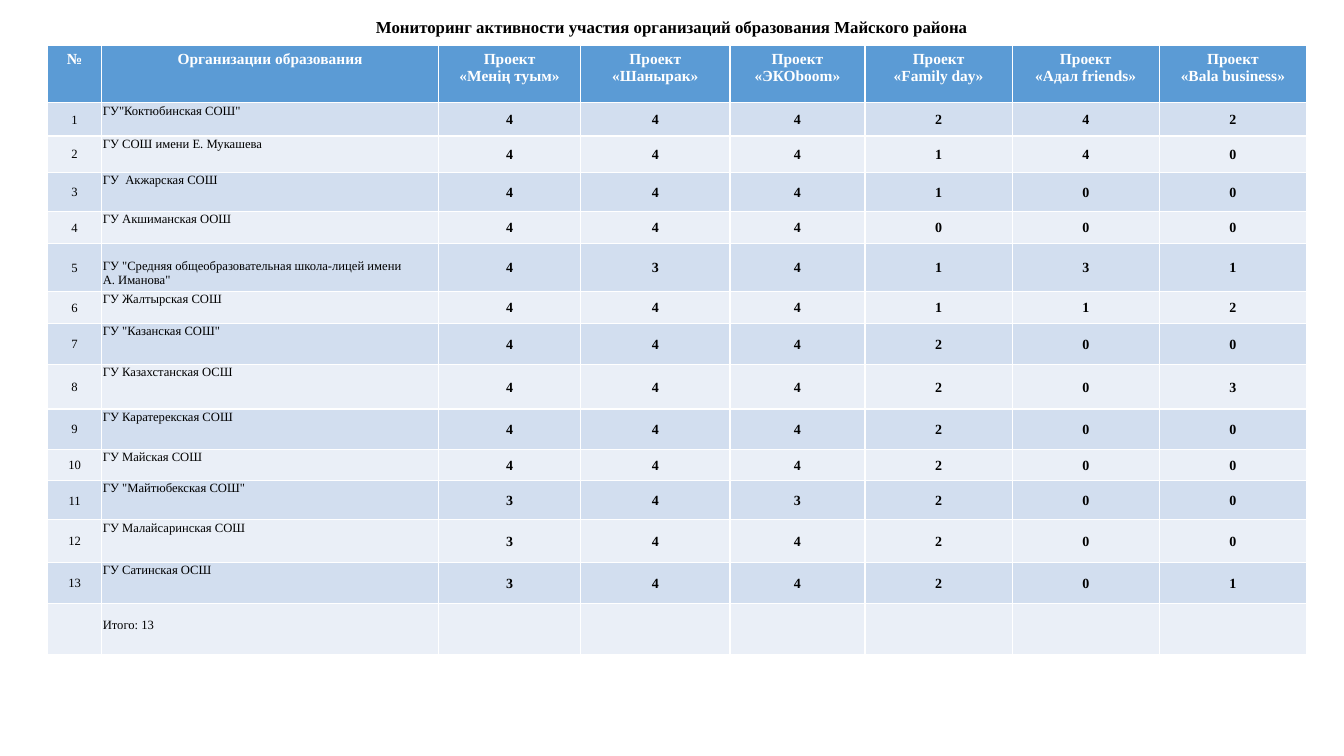
from pptx import Presentation
from pptx.dml.color import RGBColor
from pptx.enum.text import MSO_ANCHOR, PP_ALIGN
from pptx.util import Inches, Pt

HEADERS = ["№", "Организации образования", "Проект\n«Менің туым»", "Проект «Шанырак»",
           "Проект «ЭКОboom»", "Проект\n«Family day»", "Проект\n«Адал friends»",
           "Проект\n«Bala business»"]
SCHOOLS = [
    ('ГУ"Коктюбинская СОШ"', 4, 4, 4, 2, 4, 2),
    ("ГУ СОШ имени Е. Мукашева", 4, 4, 4, 1, 4, 0),
    ("ГУ  Акжарская СОШ", 4, 4, 4, 1, 0, 0),
    ("ГУ Акшиманская ООШ", 4, 4, 4, 0, 0, 0),
    ('ГУ "Средняя общеобразовательная школа-лицей имени\nА. Иманова"', 4, 3, 4, 1, 3, 1),
    ("ГУ Жалтырская СОШ", 4, 4, 4, 1, 1, 2),
    ('ГУ "Казанская СОШ"', 4, 4, 4, 2, 0, 0),
    ("ГУ Казахстанская ОСШ", 4, 4, 4, 2, 0, 3),
    ("ГУ Каратерекская СОШ", 4, 4, 4, 2, 0, 0),
    ("ГУ Майская СОШ", 4, 4, 4, 2, 0, 0),
    ('ГУ "Майтюбекская СОШ"', 3, 4, 3, 2, 0, 0),
    ("ГУ Малайсаринская СОШ", 3, 4, 4, 2, 0, 0),
    ("ГУ Сатинская ОСШ", 3, 4, 4, 2, 0, 1),
]
COLUMN_WIDTHS = [0.54, 3.34, 1.41, 1.48, 1.34, 1.46, 1.46, 1.46]
ROW_HEIGHTS = [0.57, 0.33, 0.36, 0.39, 0.32, 0.47, 0.32, 0.41, 0.44, 0.4,
               0.31, 0.39, 0.42, 0.41, 0.51]
LOWERED_ROWS = (5, 14)


def color(value):
    return RGBColor.from_string(value)


def format_text(text_frame, size, bold, text_color, alignment):
    for paragraph in text_frame.paragraphs:
        paragraph.alignment = alignment
        for run in paragraph.runs:
            run.font.name = "Times New Roman"
            run.font.size = Pt(size)
            run.font.bold = bold
            run.font.color.rgb = color(text_color)


presentation = Presentation()
presentation.slide_width = Inches(13.33)
presentation.slide_height = Inches(7.5)
slide = presentation.slides.add_slide(presentation.slide_layouts[5])

title = slide.shapes.title
title.left, title.top = Inches(0), Inches(0)
title.width, title.height = Inches(13.33), Inches(0.55)
title.text_frame.text = "Мониторинг активности участия организаций образования Майского района"
title.text_frame.vertical_anchor = MSO_ANCHOR.MIDDLE
title.text_frame.paragraphs[0].line_spacing = 0.9
format_text(title.text_frame, 12, True, "000000", PP_ALIGN.CENTER)

rows = [HEADERS]
rows += [(number, *school) for number, school in enumerate(SCHOOLS, 1)]
rows.append(("", f"Итого: {len(SCHOOLS)}", "", "", "", "", "", ""))

table = slide.shapes.add_table(len(rows), len(HEADERS), Inches(0.47), Inches(0.45),
                               Inches(sum(COLUMN_WIDTHS)), Inches(sum(ROW_HEIGHTS))).table
for column, width in zip(table.columns, COLUMN_WIDTHS):
    column.width = Inches(width)
for row, height in zip(table.rows, ROW_HEIGHTS):
    row.height = Inches(height)

for row_index, values in enumerate(rows):
    for column_index, value in enumerate(values):
        cell = table.cell(row_index, column_index)
        cell.fill.solid()
        if row_index == 0:
            fill_color = "5B9BD5"
        else:
            fill_color = "D2DEEF" if row_index % 2 else "EAEFF7"
        cell.fill.fore_color.rgb = color(fill_color)
        if value == "":
            continue
        cell.text_frame.text = str(value)
        if row_index == 0:
            format_text(cell.text_frame, 11, True, "FFFFFF", PP_ALIGN.CENTER)
            continue
        cell.margin_left = cell.margin_right = cell.margin_top = Inches(0.01)
        cell.margin_bottom = Inches(0)
        if column_index == 1:
            if row_index in LOWERED_ROWS:
                cell.margin_top = Inches(0.15)
            format_text(cell.text_frame, 9, False, "000000", PP_ALIGN.LEFT)
        else:
            cell.vertical_anchor = MSO_ANCHOR.MIDDLE
            is_score = column_index > 1
            format_text(cell.text_frame, 10 if is_score else 9, is_score, "000000",
                        PP_ALIGN.CENTER)

presentation.save("out.pptx")
